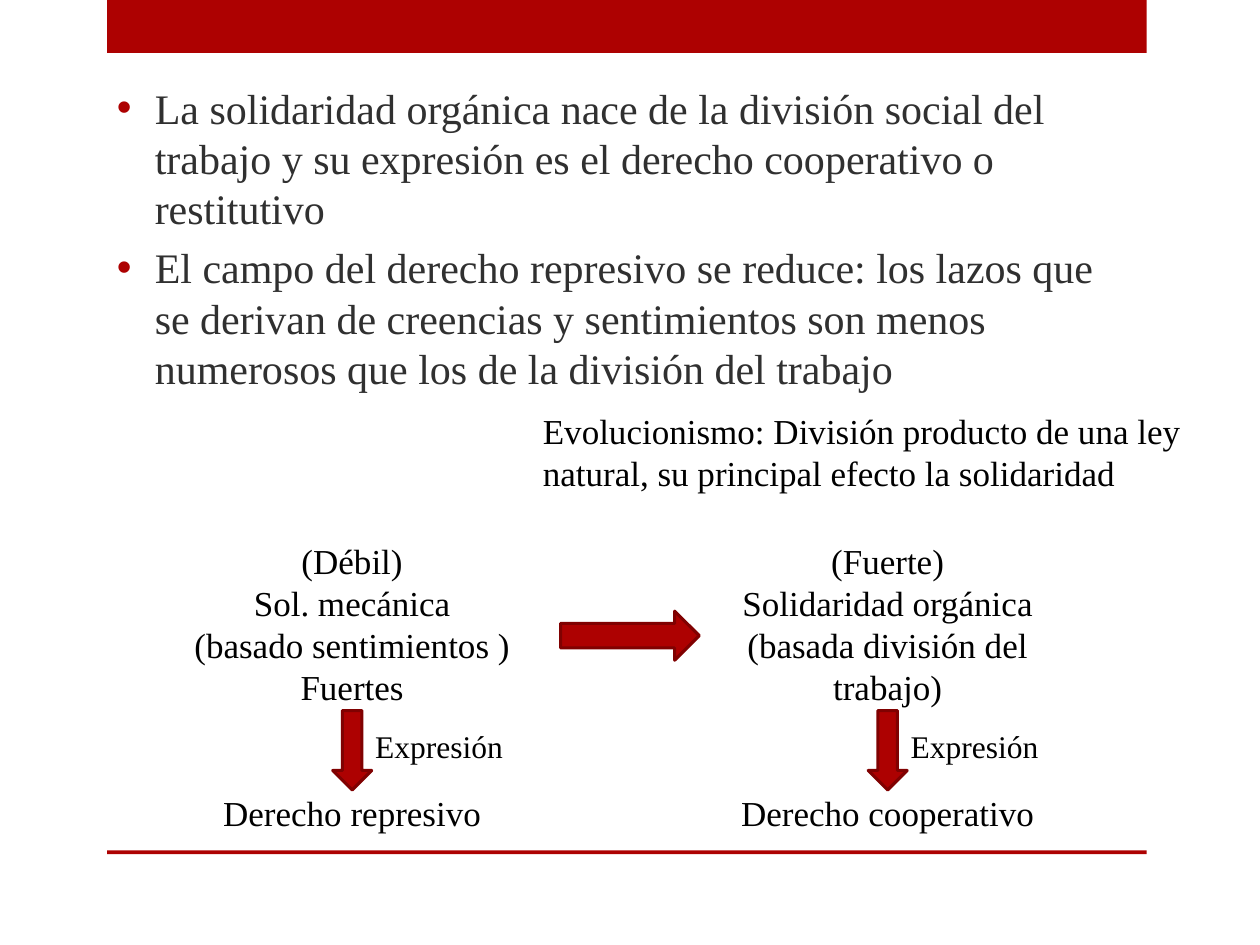
import pptx
import pptx.dml.color
import pptx.enum.shapes
import pptx.enum.text
import pptx.oxml
import pptx.util
from lxml import etree
from pptx.util import Inches

RED, DARK_RED, GREY, BLACK = "AD0101", "800101", "303030", "000000"
FONT = "Times New Roman"
SHAPES = pptx.enum.shapes.MSO_SHAPE
CENTER = pptx.enum.text.PP_ALIGN.CENTER


def color(value):
    return pptx.dml.color.RGBColor.from_string(value)


def add_block(slide, preset, box, line=None):
    shape = slide.shapes.add_shape(preset, *map(Inches, box))
    shape.shadow.inherit = False
    shape.fill.solid()
    shape.fill.fore_color.rgb = color(RED)
    if line:
        shape.line.color.rgb = color(line)
        shape.line.width = pptx.util.Pt(1.75)
    else:
        shape.line.fill.background()


def add_text(slide, box, lines, size, text_color=BLACK, alignment=None):
    text_frame = slide.shapes.add_textbox(*map(Inches, box)).text_frame
    text_frame.word_wrap = True
    text_frame.text = "\n".join(lines)
    for paragraph in text_frame.paragraphs:
        paragraph.alignment = alignment
        for run in paragraph.runs:
            run.font.name = FONT
            run.font.size = pptx.util.Pt(size)
            run.font.color.rgb = color(text_color)
    return text_frame


def add_bullet(paragraph):
    properties = paragraph._p.get_or_add_pPr()
    properties.set("marL", str(Inches(0.3)))
    properties.set("indent", str(Inches(-0.3)))
    bullet_color = etree.SubElement(properties, pptx.oxml.ns.qn("a:buClr"))
    etree.SubElement(bullet_color, pptx.oxml.ns.qn("a:srgbClr"), val=RED)
    etree.SubElement(properties, pptx.oxml.ns.qn("a:buFont"), typeface="Arial")
    etree.SubElement(properties, pptx.oxml.ns.qn("a:buChar"), char="•")


def add_frame(slide, left, width):
    # Band at the top and rule at the bottom
    for top, height in ((0, 0.42), (6.75, 0.03)):
        add_block(slide, SHAPES.RECTANGLE, (left, top, width, height))


def add_body(slide, box, lines):
    text_frame = add_text(slide, box, lines, 24, GREY)
    text_frame.vertical_anchor = pptx.enum.text.MSO_ANCHOR.MIDDLE
    text_frame.margin_bottom = Inches(0.39)
    for paragraph in text_frame.paragraphs:
        paragraph.space_before = pptx.util.Pt(4.8)
        add_bullet(paragraph)


def add_solidarity(slide, box, lines):
    # Type of solidarity, then the law that expresses it
    left, top, width, height = box
    text_frame = add_text(slide, box, lines, 20, alignment=CENTER)
    text_frame.paragraphs[-1].space_before = pptx.util.Pt(48)
    # Arrow from one to the other, with its label
    add_text(slide, (left + 1.5, 5.72, 1.26, 0.4), ["Expresión"], 18)
    add_block(slide, SHAPES.DOWN_ARROW,
              (left + width / 2 - 0.155, 5.64, 0.31, 0.63), DARK_RED)


def main():
    presentation = pptx.Presentation()
    presentation.slide_width = Inches(10)
    presentation.slide_height = Inches(7.5)
    slide = presentation.slides.add_slide(presentation.slide_layouts[6])

    add_frame(slide, 0.85, 8.25)
    add_body(slide, (0.83, 0.75, 8.25, 2.61), [
        "La solidaridad orgánica nace de la división social del trabajo y su "
        "expresión es el derecho cooperativo o restitutivo",
        "El campo del derecho represivo se reduce: los lazos que se derivan de "
        "creencias y sentimientos son menos numerosos que los de la división "
        "del trabajo",
    ])
    # Remark on evolutionism
    add_text(slide, (4.21, 3.2, 5.28, 0.77), [
        "Evolucionismo: División producto de una ley natural, su principal "
        "efecto la solidaridad"], 20)

    # From mechanical to organic solidarity
    add_solidarity(slide, (1.38, 4.23, 2.83, 2.46), [
        "(Débil)", "Sol. mecánica", "(basado sentimientos )", "Fuertes",
        "Derecho represivo"])
    add_solidarity(slide, (5.63, 4.23, 2.83, 2.46), [
        "(Fuerte)", "Solidaridad orgánica", "(basada división del trabajo)",
        "Derecho cooperativo"])
    add_block(slide, SHAPES.RIGHT_ARROW, (4.45, 4.85, 1.1, 0.39), DARK_RED)

    presentation.save("out.pptx")


if __name__ == "__main__":
    main()
